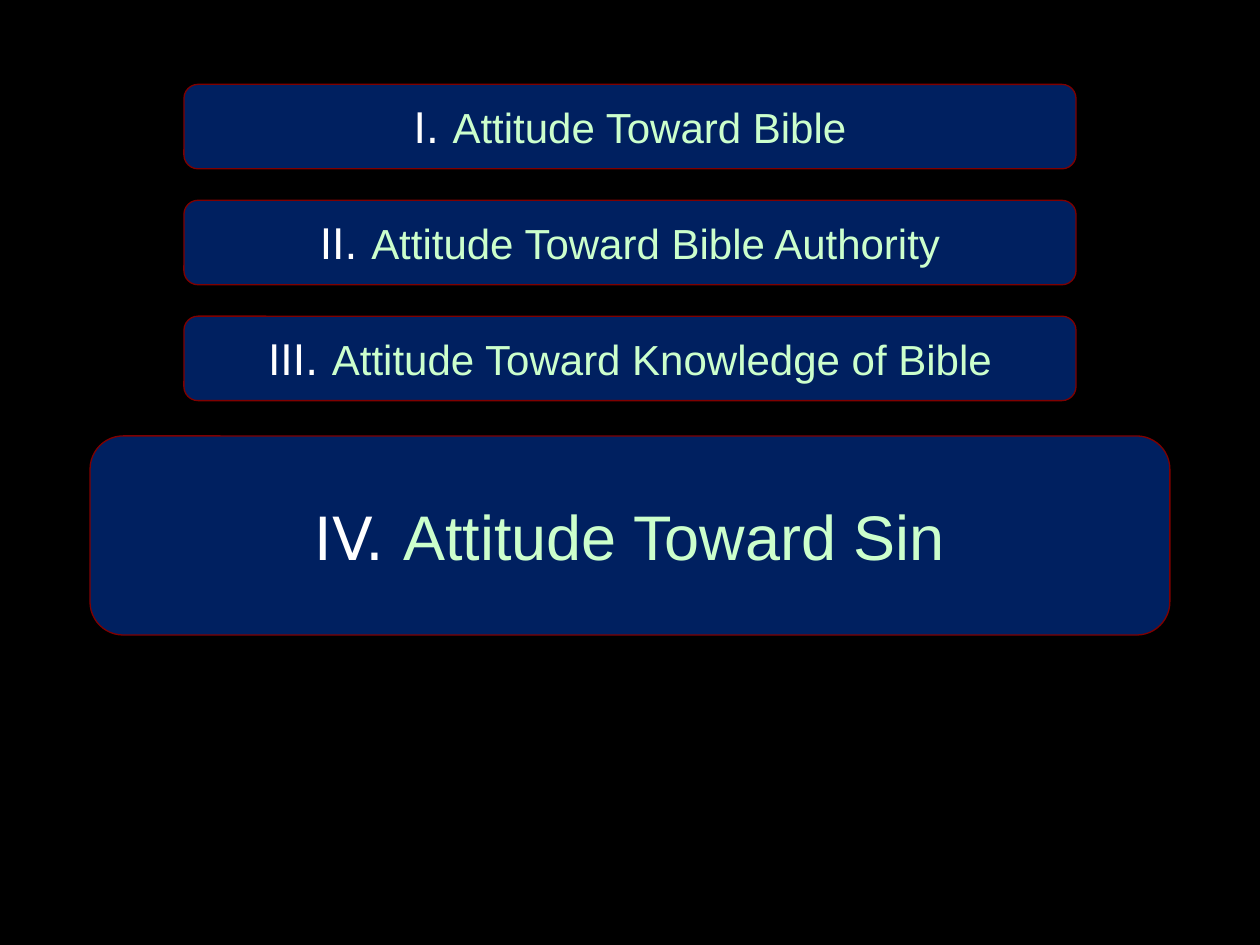
"""Build a slide of four attitude headings, the last one emphasised."""
from pptx import Presentation
from pptx.dml.color import RGBColor
from pptx.enum import shapes, text
from pptx.util import Inches, Pt

SLIDE_W, SLIDE_H = 10, 7.5
TOP, STEP = 0.67, 0.92
SMALL = {"width": 7.08, "height": 0.67, "sizes": (24, 24)}
LARGE = {"width": 8.57, "height": 1.58, "sizes": (34, 36)}
HEADINGS = [
    ("I. ", "Attitude Toward Bible", TOP, SMALL),
    ("II. ", "Attitude Toward Bible Authority", TOP + STEP, SMALL),
    ("III. ", "Attitude Toward Knowledge of Bible", TOP + 2 * STEP, SMALL),
    ("IV. ", "Attitude Toward Sin", 3.46, LARGE),
]
RUN_STYLES = [("DejaVu Sans", "FFFFFF"), ("Arial", "CCFFCC")]


def paint(fill, color):
    fill.solid()
    fill.fore_color.rgb = RGBColor.from_string(color)


def add_heading(s, numeral, title, top, style):
    width, height = style["width"], style["height"]
    sp = s.shapes.add_shape(
        shapes.MSO_SHAPE.ROUNDED_RECTANGLE,
        Inches((SLIDE_W - width) / 2), Inches(top), Inches(width), Inches(height))
    sp.shadow.inherit = False
    paint(sp.fill, "002060")
    paint(sp.line.fill, "800000")
    sp.line.width = Pt(0.75)
    tf = sp.text_frame
    tf.vertical_anchor = text.MSO_ANCHOR.MIDDLE
    p = tf.paragraphs[0]
    p.alignment = text.PP_ALIGN.CENTER
    for words, size, (font, color) in zip((numeral, title), style["sizes"], RUN_STYLES):
        r = p.add_run()
        r.text = words
        for name, value in {"name": font, "size": Pt(size)}.items():
            setattr(r.font, name, value)
        paint(r.font.fill, color)


def main():
    prs = Presentation()
    prs.slide_width, prs.slide_height = Inches(SLIDE_W), Inches(SLIDE_H)
    s = prs.slides.add_slide(prs.slide_layouts[6])
    paint(s.background.fill, "000000")
    for heading in HEADINGS:
        add_heading(s, *heading)
    prs.save("out.pptx")


if __name__ == "__main__":
    main()
